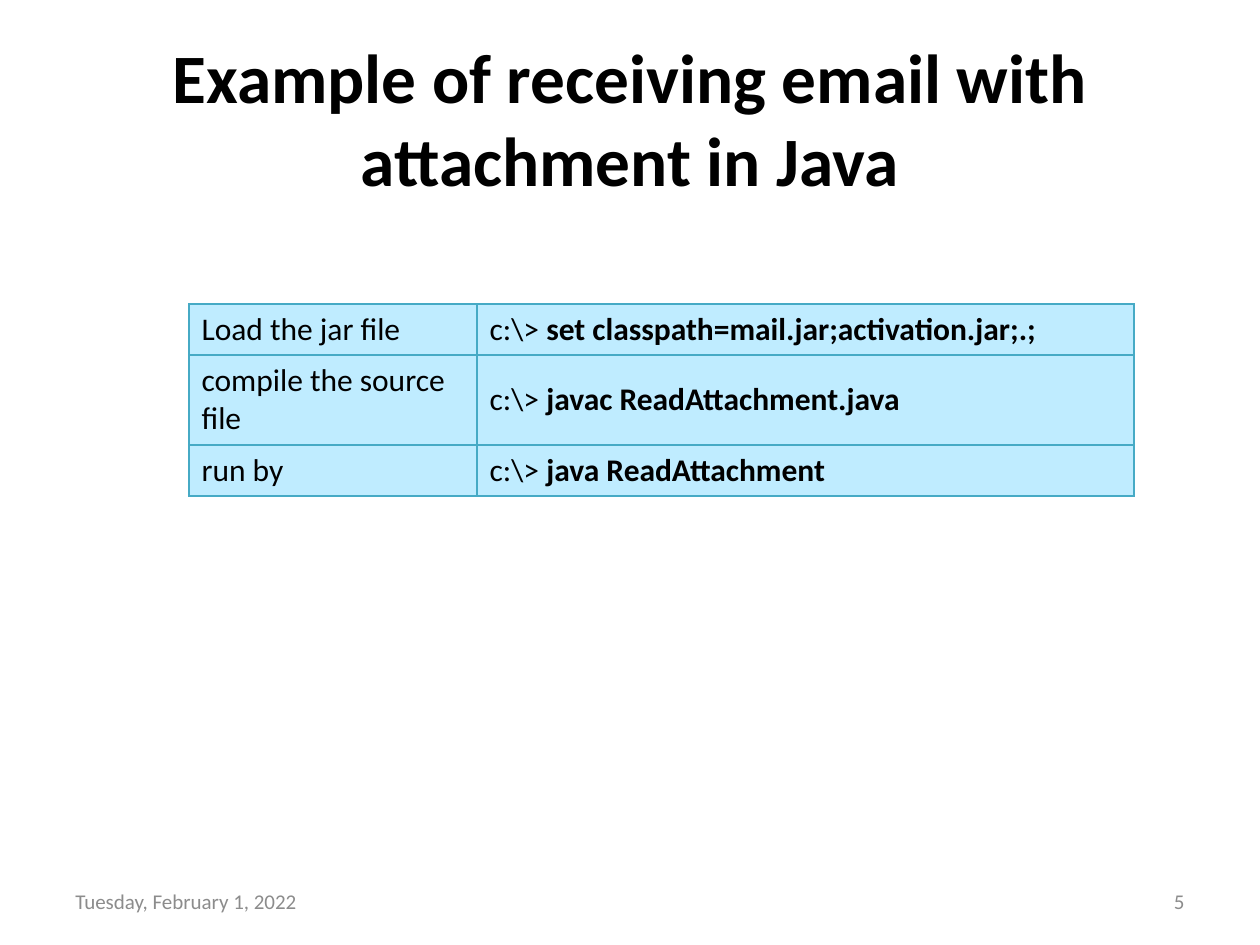
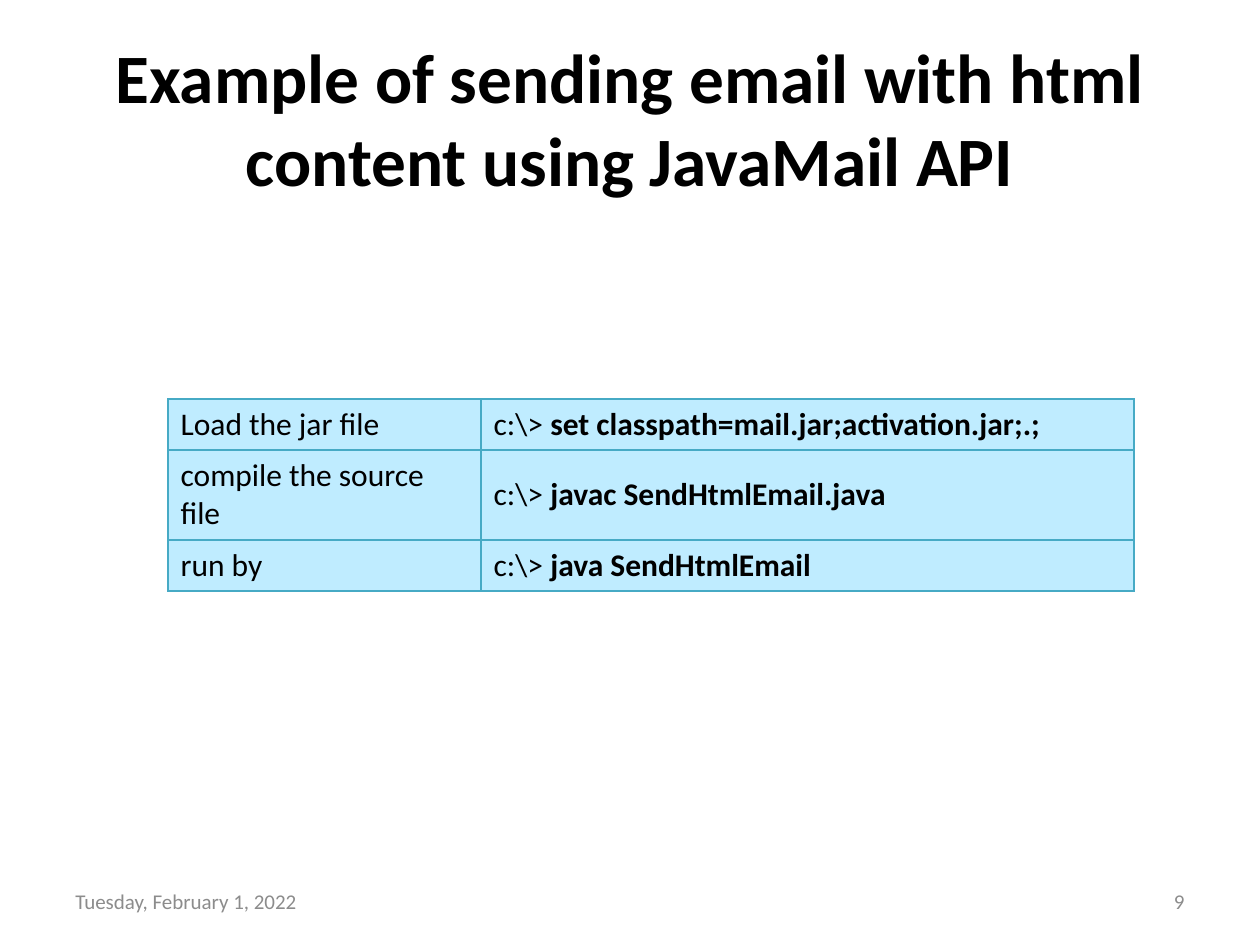
from lxml.etree import SubElement
from pptx import Presentation
from pptx.dml.color import RGBColor
from pptx.enum.text import MSO_ANCHOR, PP_ALIGN
from pptx.oxml.ns import qn
from pptx.util import Emu, Pt

# Content
PROMPT = "c:\\> "
DATE = "Tuesday, February 1, 2022"
STEPS = ["Load the jar file", "compile the source file", "run by"]
CLASSPATH = "set classpath=mail.jar;activation.jar;.;"
SLIDES = [
    {
        "title": "Example of receiving email with attachment in Java",
        "number": "5",
        "class": "ReadAttachment",
        "table_at": (189, 304),
        "columns": (288, 657),
    },
    {
        "title": "Example of sending email with html content using JavaMail API",
        "number": "9",
        "class": "SendHtmlEmail",
        "table_at": (168, 399),
        "columns": (313, 653),
    },
]

# Shared style, lengths in px
SLIDE_SIZE = (1260, 945)
TITLE_BOX = (63, 38, 1134, 158)
DATE_BOX = (63, 876, 294, 50)
NUMBER_BOX = (903, 876, 294, 50)
ROW_HEIGHTS = (51, 90, 51)
FONT = "Calibri"
BLACK, GREY, CELL_FILL, BORDER = "000000", "8C8C8C", "BFECFF", "46AAC5"


def px(length):
    return Emu(round(length * 914400 / 126))


def color(value):
    return RGBColor.from_string(value)


def format_run(run, size, value, bold=False):
    run.font.name = FONT
    run.font.size = Pt(size)
    run.font.bold = bold
    run.font.color.rgb = color(value)


def add_text(slide, box, text, size, value, align, bold=False):
    shape = slide.shapes.add_textbox(*map(px, box))
    text_frame = shape.text_frame
    text_frame.word_wrap = True
    text_frame.vertical_anchor = MSO_ANCHOR.MIDDLE
    text_frame.text = text
    paragraph = text_frame.paragraphs[0]
    paragraph.alignment = align
    format_run(paragraph.runs[0], size, value, bold)


def add_borders(cell):
    # Border lines must come before the fill in the cell properties
    properties = cell._tc.get_or_add_tcPr()
    for side in ("a:lnL", "a:lnR", "a:lnT", "a:lnB"):
        line = SubElement(properties, qn(side), w=str(Pt(0.75)))
        fill = SubElement(line, qn("a:solidFill"))
        SubElement(fill, qn("a:srgbClr"), val=BORDER)


def fill_cell(cell, parts):
    add_borders(cell)
    cell.fill.solid()
    cell.fill.fore_color.rgb = color(CELL_FILL)
    cell.vertical_anchor = MSO_ANCHOR.MIDDLE
    paragraph = cell.text_frame.paragraphs[0]
    for text, bold in parts:
        run = paragraph.add_run()
        run.text = text
        format_run(run, 18, BLACK, bold)


def add_command_table(slide, content):
    name = content["class"]
    commands = [CLASSPATH, f"javac {name}.java", f"java {name}"]
    columns = content["columns"]
    box = (*content["table_at"], sum(columns), sum(ROW_HEIGHTS))
    table = slide.shapes.add_table(len(STEPS), 2, *map(px, box)).table
    table.first_row = table.horz_banding = False
    for column, width in zip(table.columns, columns):
        column.width = px(width)
    for row, height, step, command in zip(table.rows, ROW_HEIGHTS, STEPS, commands):
        row.height = px(height)
        fill_cell(row.cells[0], [(step, False)])
        fill_cell(row.cells[1], [(PROMPT, False), (command, True)])


def main():
    presentation = Presentation()
    presentation.slide_width, presentation.slide_height = map(px, SLIDE_SIZE)
    for content in SLIDES:
        slide = presentation.slides.add_slide(presentation.slide_layouts[6])
        add_text(slide, TITLE_BOX, content["title"], 39.6, BLACK, PP_ALIGN.CENTER, True)
        add_command_table(slide, content)
        # Footer
        add_text(slide, DATE_BOX, DATE, 12, GREY, PP_ALIGN.LEFT)
        add_text(slide, NUMBER_BOX, content["number"], 12, GREY, PP_ALIGN.RIGHT)
    presentation.save("out.pptx")


if __name__ == "__main__":
    main()
